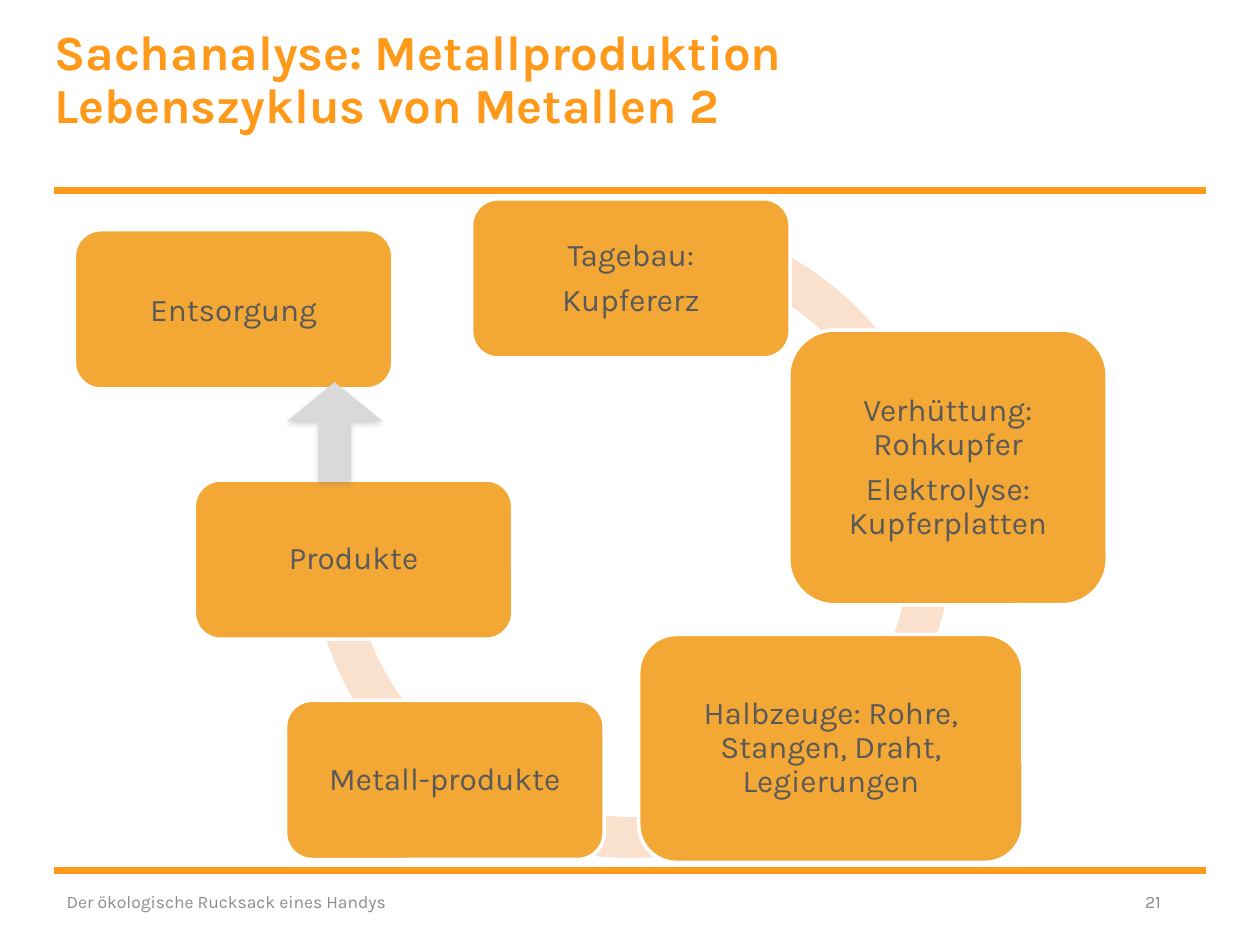
from lxml import etree
from pptx import Presentation
from pptx import util as u
from pptx.dml.color import RGBColor
from pptx.enum import shapes, text
from pptx.oxml import parse_xml
from pptx.oxml.ns import qn

ORANGE = RGBColor(0xFF, 0x99, 0x19)
BOX_FILL = RGBColor(0xF3, 0xA7, 0x34)
RING_FILL = RGBColor(0xFA, 0xE1, 0xCE)
ARROW_FILL = RGBColor(0xD9, 0xD9, 0xD9)
WHITE = RGBColor(0xFF, 0xFF, 0xFF)
TEXT_GREY = RGBColor(0x59, 0x59, 0x59)
FOOTER_GREY = RGBColor(0x8C, 0x8C, 0x8C)
FONT = "Karla"
SHAPE = shapes.MSO_SHAPE
ALIGN = text.PP_ALIGN
MIDDLE = text.MSO_ANCHOR.MIDDLE

presentation = Presentation()
presentation.slide_width, presentation.slide_height = u.Pt(720), u.Pt(540)
slide = presentation.slides.add_slide(presentation.slide_layouts[6])


def add_filled(kind, left, top, width, height, fill, outline=None):
    shape = slide.shapes.add_shape(kind, u.Pt(left), u.Pt(top), u.Pt(width), u.Pt(height))
    shape.shadow.inherit = False
    shape.fill.solid()
    shape.fill.fore_color.rgb = fill
    if outline is None:
        shape.line.fill.background()
    else:
        shape.line.color.rgb = outline
        shape.line.width = u.Pt(2)
    return shape


def write(shape, lines, size, color, align, inset, anchor=MIDDLE, spacing=0.9, bold=False):
    frame = shape.text_frame
    frame.word_wrap = True
    frame.vertical_anchor = anchor
    frame.margin_left = frame.margin_right = u.Pt(inset)
    frame.margin_top = frame.margin_bottom = u.Pt(min(inset, 5))
    for index, line in enumerate(lines):
        paragraph = frame.paragraphs[0] if index == 0 else frame.add_paragraph()
        paragraph.alignment = align
        paragraph.line_spacing = spacing
        if index:
            paragraph.space_before = u.Pt(6.3)
        for number, part in enumerate(line.split("\n")):
            if number:
                paragraph.add_line_break()
            run = paragraph.add_run()
            run.text = part
            run.font.name = FONT
            run.font.size = u.Pt(size)
            run.font.bold = bold
            run.font.color.rgb = color


# Rules above and below the content
for y in (108.8, 497.5):
    rule = slide.shapes.add_connector(
        shapes.MSO_CONNECTOR.STRAIGHT, u.Pt(31), u.Pt(y), u.Pt(689), u.Pt(y))
    rule.line.color.rgb = ORANGE
    rule.line.width = u.Pt(4)
    etree.SubElement(rule._element.spPr, qn("a:effectLst"))

# Title
title = slide.shapes.add_textbox(u.Pt(31), u.Pt(16), u.Pt(482), u.Pt(84))
write(title, ["Sachanalyse: Metallproduktion\nLebenszyklus von Metallen 2"],
      28, ORANGE, ALIGN.LEFT, 0, anchor=text.MSO_ANCHOR.TOP, bold=True)

# Cycle ring behind the stations
ring = add_filled(SHAPE.CIRCULAR_ARROW, 165, 111, 391, 391, RING_FILL)
for index, value in enumerate((0.06, 3.31, 137.87, 173.8, 0.06)):
    ring.adjustments[index] = value

# Stations of the cycle, clockwise from the top
stations = [
    (269.5, 113.6, 182, 91, ["Tagebau:", "Kupfererz"]),
    (450.7, 188.6, 182, 157, ["Verhüttung: Rohkupfer", "Elektrolyse: Kupferplatten"]),
    (365, 362.5, 219.6, 130.3, ["Halbzeuge: Rohre, Stangen, Draht, Legierungen"]),
    (163.2, 400.2, 182, 91, ["Metall-produkte"]),
    (111, 274.3, 182, 91, ["Produkte"]),
]
for left, top, width, height, lines in stations:
    station = add_filled(SHAPE.ROUNDED_RECTANGLE, left, top, width, height, BOX_FILL, WHITE)
    write(station, lines, 18, TEXT_GREY, ALIGN.CENTER, 5)

# White cover that opens the ring, then the disposal exit
add_filled(SHAPE.ROUNDED_RECTANGLE, 139.7, 138.2, 126.7, 136.8, WHITE)
disposal = add_filled(SHAPE.ROUNDED_RECTANGLE, 42.5, 131.3, 182, 91, BOX_FILL, WHITE)
write(disposal, ["Entsorgung"], 18, TEXT_GREY, ALIGN.CENTER, 7.2, spacing=1)

arrow = add_filled(SHAPE.UP_ARROW, 164, 218.3, 54.5, 56.5, ARROW_FILL)
arrow.adjustments[0] = 0.34
arrow.adjustments[1] = 0.41
arrow._element.spPr.find(qn("a:effectLst")).append(parse_xml(
    '<a:outerShdw xmlns:a="http://schemas.openxmlformats.org/drawingml/2006/main" '
    'blurRad="40000" dist="23000" dir="5400000" rotWithShape="0">'
    '<a:srgbClr val="808080"><a:alpha val="35000"/></a:srgbClr></a:outerShdw>'))

# Footer and slide number
for left, width, words, align in (
        (31, 243.4, "Der ökologische Rucksack eines Handys", ALIGN.LEFT),
        (541.5, 129, "21", ALIGN.RIGHT)):
    footer = slide.shapes.add_textbox(u.Pt(left), u.Pt(500.5), u.Pt(width), u.Pt(29))
    write(footer, [words], 10, FOOTER_GREY, align, 7.2, spacing=1)

presentation.save("out.pptx")
